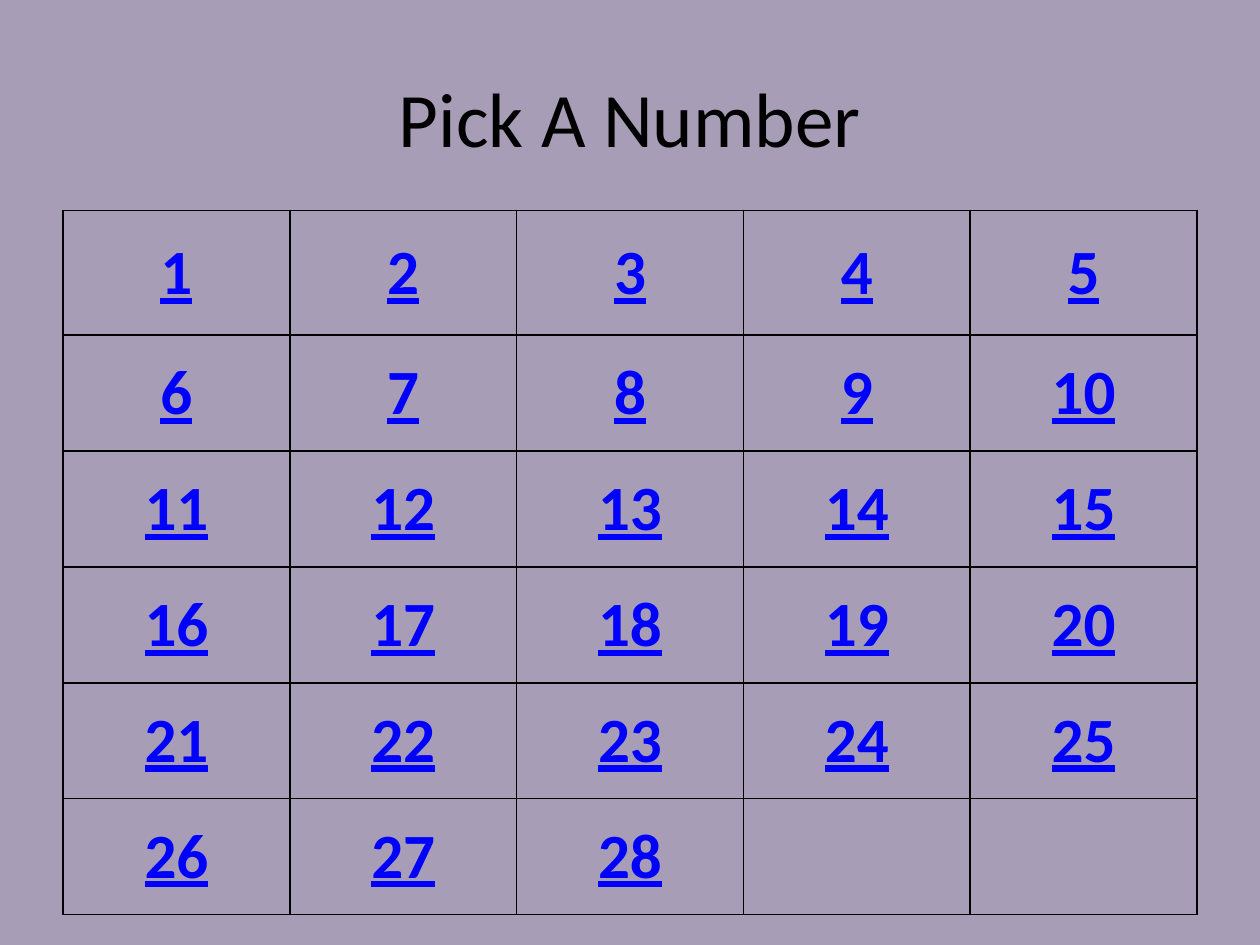
"""Build a slide with a grid of numbers to pick from."""
import pptx
import pptx.util
import pptx.dml.color
import pptx.enum.text
import pptx.oxml.ns
import lxml.etree

Pt = pptx.util.Pt
CENTER = pptx.enum.text.PP_ALIGN.CENTER
MIDDLE = pptx.enum.text.MSO_ANCHOR.MIDDLE


def color(value):
    return pptx.dml.color.RGBColor.from_string(value)


def add_text(para, text, size, value):
    para.alignment = CENTER
    span = para.add_run()
    span.text = text
    span.font.name = "Calibri"
    span.font.size = Pt(size)
    span.font.color.rgb = color(value)
    return span


deck = pptx.Presentation()
deck.slide_width = Pt(720)
deck.slide_height = Pt(540)
page = deck.slides.add_slide(deck.slide_layouts[6])
page.background.fill.solid()
page.background.fill.fore_color.rgb = color("A79DB6")

title = page.shapes.add_textbox(Pt(36), Pt(21.6), Pt(648), Pt(90))
title.text_frame.word_wrap = True
title.text_frame.vertical_anchor = MIDDLE
add_text(title.text_frame.paragraphs[0], "Pick A Number", 44, "000000")

row_heights = [71.28] + [66.24] * 5
columns = 5
last_number = 28
frame = page.shapes.add_table(
    len(row_heights), columns, Pt(36), Pt(120.24), Pt(648), Pt(sum(row_heights)))
grid = frame.table
grid.first_row = False
grid.horz_banding = False
for column in grid.columns:
    column.width = Pt(648 / columns)
for row, height in zip(grid.rows, row_heights):
    row.height = Pt(height)

qn = pptx.oxml.ns.qn
for number, cell in enumerate(grid.iter_cells(), start=1):
    cell.vertical_anchor = MIDDLE
    cell.margin_left = cell.margin_right = Pt(6.48)
    cell.margin_top = cell.margin_bottom = Pt(3.6)
    properties = cell._tc.get_or_add_tcPr()
    for side in ("a:lnL", "a:lnR", "a:lnT", "a:lnB"):
        border = lxml.etree.SubElement(properties, qn(side), w=str(Pt(1)))
        paint = lxml.etree.SubElement(border, qn("a:solidFill"))
        lxml.etree.SubElement(paint, qn("a:srgbClr"), val="000000")
    cell.fill.background()
    if number <= last_number:
        span = add_text(cell.text_frame.paragraphs[0], str(number), 36, "0000FF")
        span.font.bold = True
        span.font.underline = True

deck.save("out.pptx")
